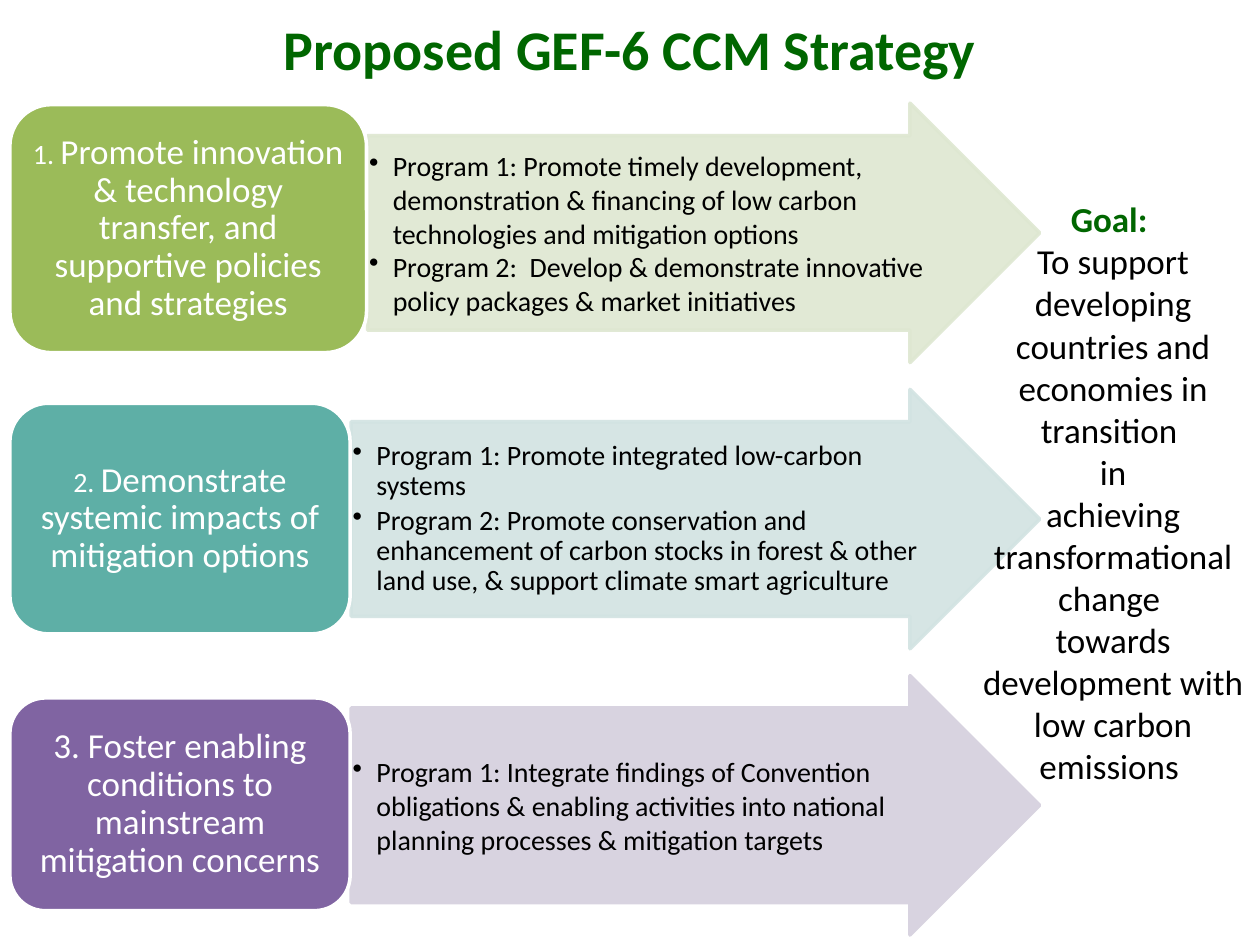
from dataclasses import dataclass

from lxml.etree import SubElement
from pptx import Presentation
from pptx.dml.color import RGBColor
from pptx.enum.shapes import MSO_SHAPE
from pptx.enum.text import MSO_ANCHOR, PP_ALIGN
from pptx.oxml.ns import qn
from pptx.util import Cm, Pt


@dataclass(frozen=True)
class Theme:
    font: str = "Calibri"
    head: str = "006600"
    ink: str = "000000"
    white: str = "FFFFFF"
    title: int = 32
    main: int = 20
    small: int = 16
    edge: int = 2


THEME = Theme()
PITCH = 5.77
ARROW_H = 5.23
ARROW_END = 20.96

# Each row: box top, width and height, box colour, arrow colour and opacity,
# heading runs, programs, and the line and paragraph spacing of the programs.
ROWS = [
    dict(box=(2.11, 7.19, 5.0), color="9BBB59", tint="DEE7D1", alpha=90,
         head=[("1. ", THEME.small),
               ("Promote innovation & technology transfer, and supportive "
                "policies and strategies", THEME.main)],
         items=["Program 1: Promote timely development, demonstration & "
                "financing of low carbon technologies and mitigation options",
                "Program 2:  Develop & demonstrate innovative policy packages "
                "& market initiatives"],
         lines=1.0, after=0),
    dict(box=(8.13, 6.86, 4.65), color="5EAFA6", tint="D2E3E2", alpha=90,
         head=[("2. ", THEME.small),
               ("Demonstrate systemic impacts of mitigation options",
                THEME.main)],
         items=["Program 1: Promote integrated low-carbon systems",
                "Program 2: Promote conservation and enhancement of carbon "
                "stocks in forest & other land use, & support climate smart "
                "agriculture"],
         lines=0.9, after=2.4),
    dict(box=(14.07, 6.86, 4.29), color="8064A2", tint="D8D3E0", alpha=100,
         head=[("3. Foster enabling conditions to mainstream mitigation "
                "concerns", THEME.main)],
         items=["Program 1: Integrate findings of Convention obligations & "
                "enabling activities into national planning processes & "
                "mitigation targets"],
         lines=1.0, after=0),
]

GOAL = [
    "To support developing countries and economies in transition ",
    "in",
    "achieving transformational change ",
    "towards development with low carbon emissions ",
]


def write(para, text, size=THEME.main, color=THEME.ink, bold=False,
          align=PP_ALIGN.CENTER, lines=1.0, after=0):
    """Add one run to a paragraph and set the paragraph's format."""
    para.alignment = align
    para.line_spacing = lines
    para.space_after = Pt(after)
    run = para.add_run()
    run.text = text
    font = run.font
    font.name, font.size, font.bold = THEME.font, Pt(size), bold
    font.color.rgb = RGBColor.from_string(color)


def bullet(para):
    para.level = 1
    props = para._p.get_or_add_pPr()
    props.set("marL", str(Cm(0.48)))
    props.set("indent", str(-Cm(0.48)))
    SubElement(props, qn("a:buChar"), char="•")


def setup(frame, side=0.25, edge=0.13):
    frame.word_wrap = True
    frame.vertical_anchor = MSO_ANCHOR.MIDDLE
    frame.margin_left = frame.margin_right = Cm(side)
    frame.margin_top = frame.margin_bottom = Cm(edge)
    return frame


def paint(part, color, alpha):
    part.solid() if hasattr(part, "solid") else part.fill.solid()
    fill = part if hasattr(part, "solid") else part.fill
    fill.fore_color.rgb = RGBColor.from_string(color)
    if alpha < 100:
        tone = fill._xPr.find(qn("a:solidFill"))[0]
        SubElement(tone, qn("a:alpha"), val=str(alpha * 1000))


def block(slide, kind, box, fill, line, alpha=100):
    shape = slide.shapes.add_shape(kind, *map(Cm, box))
    shape.shadow.inherit = False
    paint(shape.fill, fill, alpha)
    paint(shape.line, line, alpha)
    shape.line.width = Pt(THEME.edge)
    return shape


def label(slide, box):
    return setup(slide.shapes.add_textbox(*map(Cm, box)).text_frame)


def title(slide, box):
    write(label(slide, box).paragraphs[0], "Proposed GEF-6 CCM Strategy",
          size=THEME.title, color=THEME.head, bold=True)


def arrow(slide, box, row):
    shape = block(slide, MSO_SHAPE.RIGHT_ARROW, box, row["tint"], row["tint"],
                  row["alpha"])
    shape.adjustments[0], shape.adjustments[1] = 0.75, 0.5
    frame = setup(shape.text_frame, 0.03, 0.03)
    for num, text in enumerate(row["items"]):
        para = frame.add_paragraph() if num else frame.paragraphs[0]
        bullet(para)
        write(para, text, size=THEME.small, align=PP_ALIGN.LEFT,
              lines=row["lines"], after=row["after"])


def pillar(slide, box, row):
    shape = block(slide, MSO_SHAPE.ROUNDED_RECTANGLE, box, row["color"],
                  THEME.white)
    frame = setup(shape.text_frame, 0.19, 0.09)
    for text, size in row["head"]:
        write(frame.paragraphs[0], text, size=size, color=THEME.white,
              lines=0.9)


def band(slide, left, top, row):
    """Place one strategy: the arrow of programs, then its heading box."""
    high, wide, tall = row["box"]
    start = left + wide + 0.02
    arrow(slide, (start, top, ARROW_END - start, ARROW_H), row)
    pillar(slide, (left, high, wide, tall), row)


def goal(slide, box):
    frame = label(slide, box)
    write(frame.paragraphs[0], "Goal: ", color=THEME.head, bold=True)
    for text in GOAL:
        write(frame.add_paragraph(), text)


def main():
    deck = Presentation()
    deck.slide_width, deck.slide_height = Cm(25.4), Cm(19.05)
    slide = deck.slides.add_slide(deck.slide_layouts[6])
    title(slide, (1.27, 0.08, 22.86, 1.78))
    for num, row in enumerate(ROWS):
        band(slide, 0.2, 2.08 + num * PITCH, row)
    goal(slide, (19.48, 3.81, 5.92, 12.22))
    deck.save("out.pptx")


if __name__ == "__main__":
    main()
